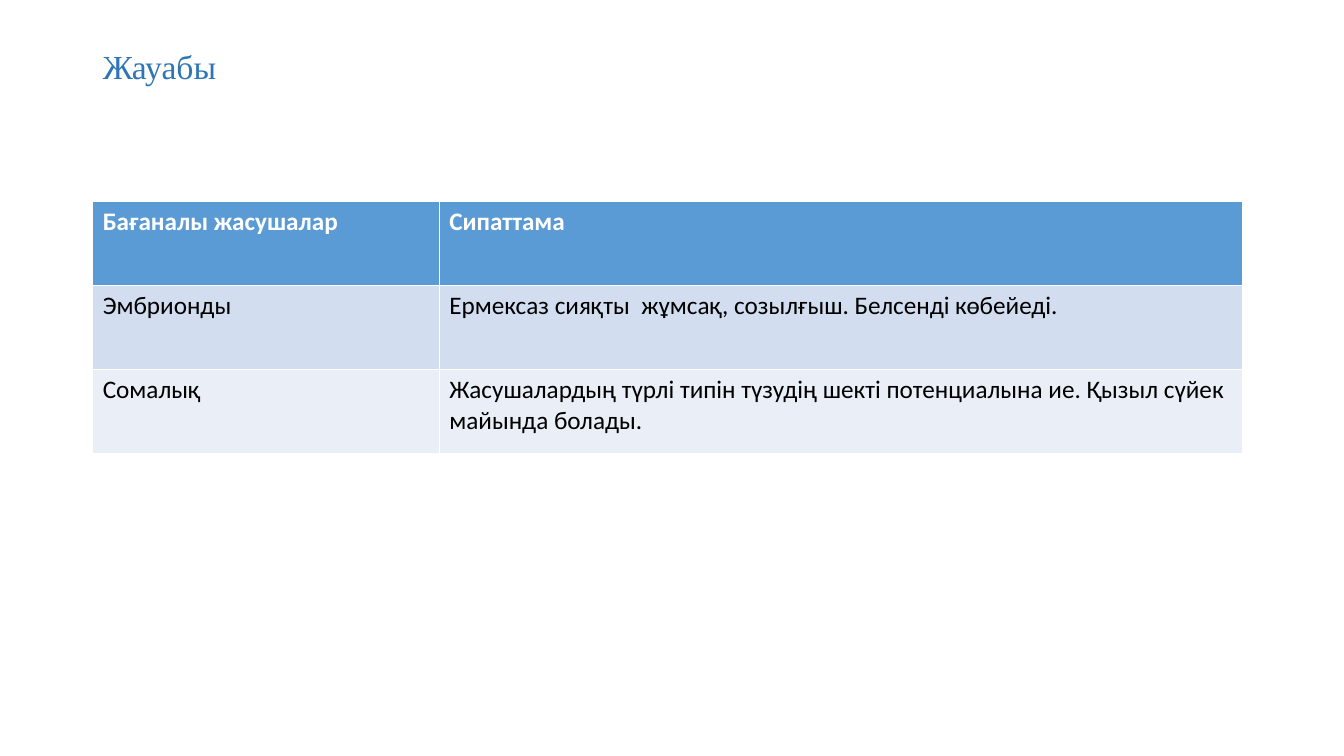
from pptx import Presentation, util as u
from pptx.dml.color import RGBColor
from pptx.enum import text
from pptx.oxml import parse_xml
from pptx.oxml.ns import nsdecls

COLORS = {"title": "2E75B6", "header": "5B9BD5", "odd": "D2DEEF",
          "even": "EAEFF7", "light": "FFFFFF", "dark": "000000"}
ROWS = [
    ("Бағаналы жасушалар", "Сипаттама"),
    ("Эмбрионды", "Ермексаз сияқты  жұмсақ, созылғыш. Белсенді көбейеді."),
    ("Сомалық", "Жасушалардың түрлі типін түзудің шекті потенциалына ие. "
                "Қызыл сүйек майында болады."),
]
ROW_FILLS = ("header", "odd", "even")
COLUMN_WIDTHS = (3.44, 7.97)
ROW_HEIGHT = 2.5 / len(ROWS)
THIN, THICK = 0.45, 1.47


def apply_format(target, values):
    """Set each named attribute on the target."""
    for name, value in values.items():
        setattr(target, name, value)


def format_font(font, color, **values):
    """Apply font values and a palette colour."""
    apply_format(font, values)
    font.color.rgb = RGBColor.from_string(COLORS[color])


def add_border(cell, side, width):
    """Draw one white border of a table cell."""
    cell._tc.get_or_add_tcPr().append(parse_xml(
        f'<a:{side} {nsdecls("a")} w="{int(u.Pt(width))}"><a:solidFill>'
        f'<a:srgbClr val="{COLORS["light"]}"/></a:solidFill></a:{side}>'))


def place_title(slide, left, top, width, height):
    """Place and format the slide title in its box."""
    title = slide.shapes.title
    apply_format(title, {"left": u.Inches(left), "top": u.Inches(top),
                         "width": u.Inches(width), "height": u.Inches(height)})
    frame = title.text_frame
    frame.text = "Жауабы"
    apply_format(frame, {"vertical_anchor": text.MSO_ANCHOR.TOP,
                         "auto_size": text.MSO_AUTO_SIZE.NONE,
                         "word_wrap": True, "margin_top": u.Inches(0.1)})
    paragraph = frame.paragraphs[0]
    apply_format(paragraph, {"alignment": text.PP_ALIGN.LEFT, "line_spacing": 0.9})
    format_font(paragraph.runs[0].font, "title", name="Times New Roman", size=u.Pt(24))


def fill_cell(cell, words, row):
    """Write one table cell with the style of its row."""
    is_header = row == 0
    cell.text = words
    format_font(cell.text_frame.paragraphs[0].runs[0].font,
                "light" if is_header else "dark",
                name="Calibri", size=u.Pt(18), bold=is_header)
    for side, width in (("lnL", THIN), ("lnR", THIN),
                        ("lnT", THICK if row == 1 else THIN),
                        ("lnB", THICK if is_header else THIN)):
        add_border(cell, side, width)
    cell.fill.solid()
    cell.fill.fore_color.rgb = RGBColor.from_string(COLORS[ROW_FILLS[row]])


def add_cell_table(slide, left, top):
    """Add the table of stem cell types."""
    table = slide.shapes.add_table(
        len(ROWS), len(COLUMN_WIDTHS), u.Inches(left), u.Inches(top),
        u.Inches(sum(COLUMN_WIDTHS)), u.Inches(ROW_HEIGHT * len(ROWS))).table
    for column, width in zip(table.columns, COLUMN_WIDTHS):
        column.width = u.Inches(width)
    for row, entries in enumerate(ROWS):
        table.rows[row].height = u.Inches(ROW_HEIGHT)
        for column, words in enumerate(entries):
            fill_cell(table.cell(row, column), words, row)


def main():
    """Build and save the answer slide."""
    presentation = Presentation()
    apply_format(presentation, {"slide_width": u.Inches(13.34),
                                "slide_height": u.Inches(7.5)})
    slide = presentation.slides.add_slide(
        presentation.slide_layouts.get_by_name("Title Only"))
    place_title(slide, 0.92, 0.4, 11.5, 0.95)
    add_cell_table(slide, 0.92, 2)
    presentation.save("out.pptx")


if __name__ == "__main__":
    main()
